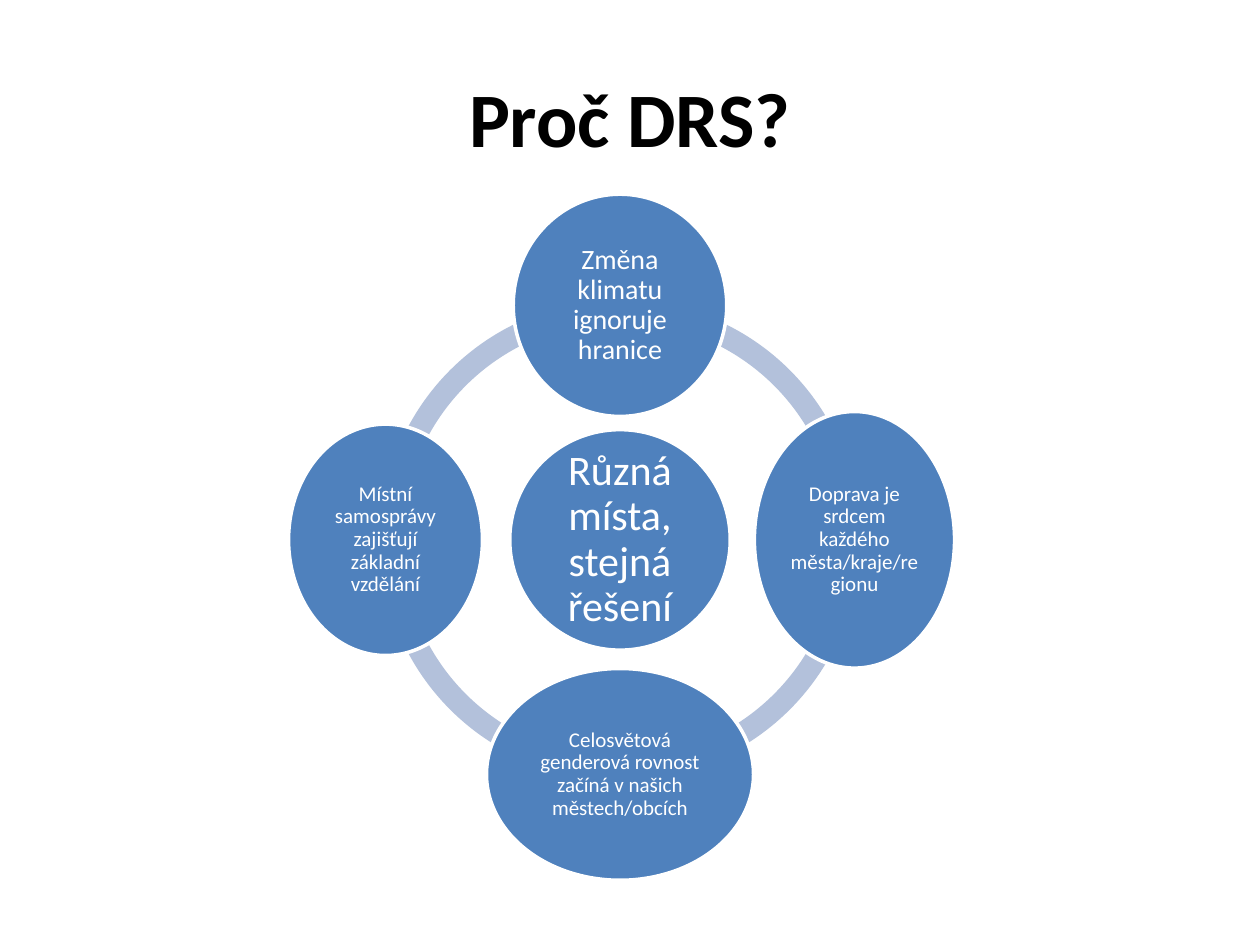
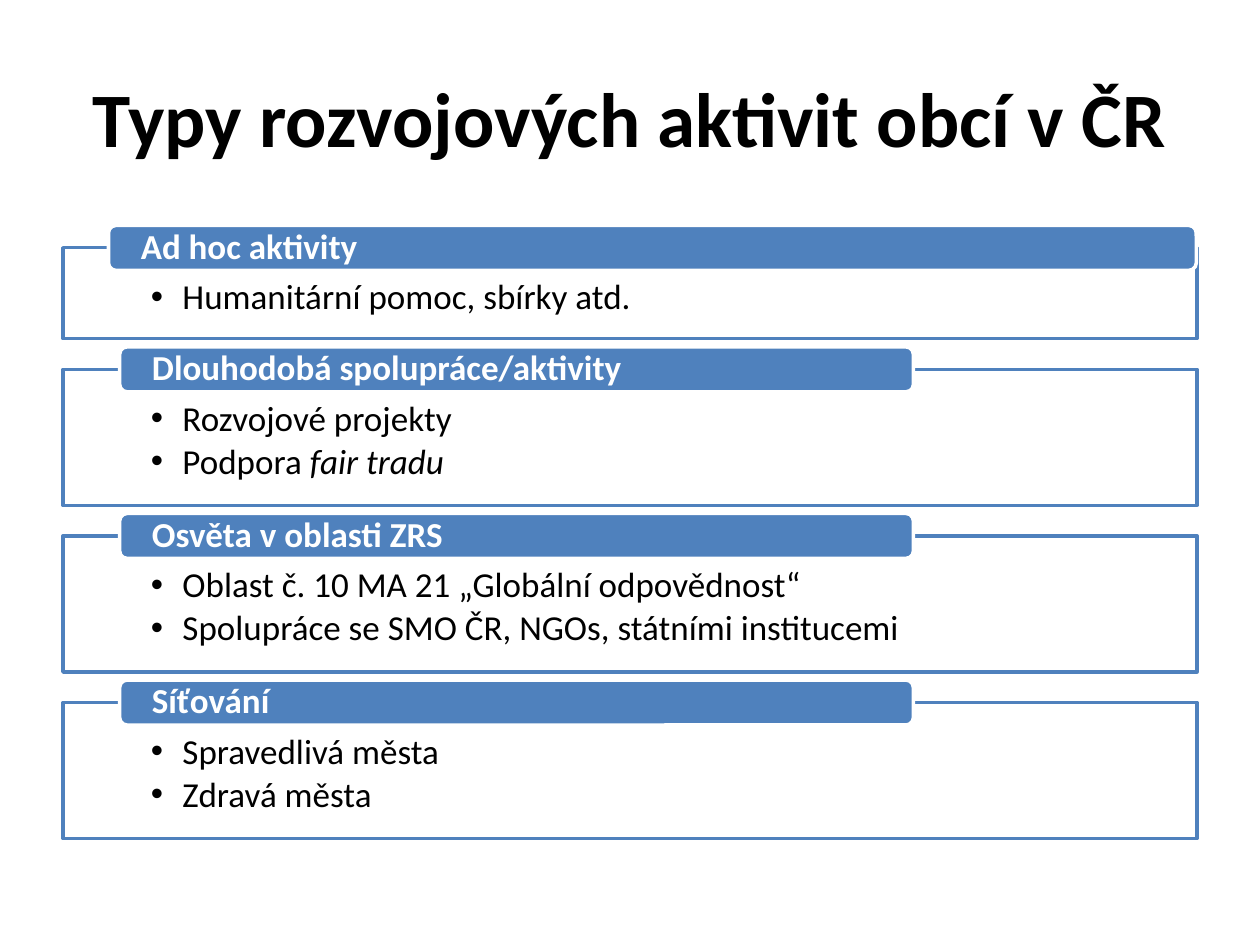
from math import cos, radians, sin

from lxml import etree
from pptx import Presentation
from pptx.dml.color import RGBColor
from pptx.enum.shapes import MSO_SHAPE
from pptx.enum.text import MSO_ANCHOR, MSO_AUTO_SIZE, PP_ALIGN
from pptx.oxml.ns import qn
from pptx.util import Pt

ARC, OVAL = MSO_SHAPE.BLOCK_ARC, MSO_SHAPE.OVAL
RECT, ROUNDED = MSO_SHAPE.RECTANGLE, MSO_SHAPE.ROUNDED_RECTANGLE
TOP, MIDDLE = MSO_ANCHOR.TOP, MSO_ANCHOR.MIDDLE
LEFT, CENTER = PP_ALIGN.LEFT, PP_ALIGN.CENTER
NO_FIT = MSO_AUTO_SIZE.NONE

THEME = {
    "font": "Calibri",
    "blue": RGBColor(0x4F, 0x81, 0xBD),
    "ring": RGBColor(0xB3, 0xC1, 0xDB),
    "white": RGBColor(0xFF, 0xFF, 0xFF),
    "black": RGBColor(0, 0, 0),
    "title_size": Pt(44),
    "hub_size": Pt(24),
    "list_size": Pt(20),
    "large_size": Pt(16),
    "small_size": Pt(12),
    "outline": Pt(2),
}


def draw_shape(page, kind, place, fill, line=None):
    shape = page.shapes.add_shape(kind, *[Pt(length) for length in place])
    shape.shadow.inherit = False
    shape.fill.solid()
    shape.fill.fore_color.rgb = fill
    if line is None:
        shape.line.fill.background()
    else:
        shape.line.color.rgb = line
        shape.line.width = THEME["outline"]
    return shape


def write_text(shape, paragraphs, size, color, margins, anchor=MIDDLE, align=CENTER, bold=False, bullet=False):
    frame = shape.text_frame
    left, top, right, bottom = [Pt(margin) for margin in margins]
    layout = {"word_wrap": True, "auto_size": NO_FIT, "vertical_anchor": anchor,
              "margin_left": left, "margin_top": top, "margin_right": right, "margin_bottom": bottom}
    for name, value in layout.items():
        setattr(frame, name, value)
    for number, spans in enumerate(paragraphs):
        para = frame.paragraphs[0] if number == 0 else frame.add_paragraph()
        para.alignment = align
        para.line_spacing = 0.9
        if bullet:
            para.level = 1
            para.space_after = Pt(3)
            properties = para._p.get_or_add_pPr()
            properties.set("marL", str(Pt(18)))
            properties.set("indent", str(-Pt(18)))
            etree.SubElement(properties, qn("a:buFont"), typeface="Arial")
            etree.SubElement(properties, qn("a:buChar"), char="•")
        for text, italic in spans:
            span = para.add_run()
            span.text = text
            for name, value in {"name": THEME["font"], "size": size, "bold": bold, "italic": italic}.items():
                setattr(span.font, name, value)
            span.font.color.rgb = color


deck = Presentation()
deck.slide_width, deck.slide_height = Pt(720), Pt(540)

pages = []
for heading in ("Proč DRS?", "Typy rozvojových aktivit obcí v ČR"):
    page = deck.slides.add_slide(deck.slide_layouts[5])
    title = page.shapes.title
    title.left, title.top, title.width, title.height = Pt(36), Pt(21.6), Pt(648), Pt(90)
    title.text_frame.text = heading
    title.text_frame.vertical_anchor = MIDDLE
    title.text_frame.auto_size = NO_FIT
    para = title.text_frame.paragraphs[0]
    para.alignment = CENTER
    for name, value in {"name": THEME["font"], "size": THEME["title_size"], "bold": True}.items():
        setattr(para.font, name, value)
    para.font.color.rgb = THEME["black"]
    pages.append(page)
reasons_page, types_page = pages

CENTER_X, CENTER_Y, ORBIT, RING = 354.3, 308.5, 134, 274.4
for start, end in ((180, 270), (90, 180), (0, 90), (270, 0)):
    place = (CENTER_X - RING / 2, CENTER_Y - RING / 2, RING, RING)
    arc = draw_shape(reasons_page, ARC, place, THEME["ring"])
    for position, value in enumerate((start * 0.6, end * 0.6, 0.046)):
        arc.adjustments[position] = value

reasons = [
    ("Různá místa, stejná řešení", 0, 0, 126, 126, "hub_size"),
    ("Změna klimatu ignoruje hranice", ORBIT, -90, 122, 127, "large_size"),
    ("Doprava je srdcem každého města/kraje/regionu", ORBIT, 0, 114.4, 146.6, "small_size"),
    ("Celosvětová genderová rovnost začíná v našich městech/obcích", ORBIT, 90, 152.6, 121, "small_size"),
    ("Místní samosprávy zajišťují základní vzdělání", ORBIT, 180, 110.8, 132.2, "small_size"),
]
for text, distance, angle, width, height, size in reasons:
    x = CENTER_X + distance * cos(radians(angle)) - width / 2
    y = CENTER_Y + distance * sin(radians(angle)) - height / 2
    oval = draw_shape(reasons_page, OVAL, (x, y, width, height), THEME["blue"], THEME["white"])
    write_text(oval, [[(text, False)]], THEME[size], THEME["white"], [1.5] * 4)

activities = [
    ("Ad hoc aktivity", 62, 621.6, 52, [[("Humanitární pomoc, sbírky atd.", False)]]),
    ("Dlouhodobá spolupráce/aktivity", 68.4, 453.6, 77.8,
     [[("Rozvojové projekty", False)], [("Podpora ", False), ("fair tradu", True)]]),
    ("Osvěta v oblasti ZRS", 68.4, 453.6, 77.8,
     [[("Oblast č. 10 MA 21 „Globální odpovědnost“", False)],
      [("Spolupráce se SMO ČR, NGOs, státními institucemi", False)]]),
    ("Síťování", 68.4, 453.6, 77.8, [[("Spravedlivá města", False)], [("Zdravá města", False)]]),
]
PANEL_GAP, TAB_HEIGHT, TAB_RISE = 17.4, 25.7, 12.8
panel_top = 141.6
for heading, tab_left, tab_width, panel_height, items in activities:
    panel = draw_shape(types_page, RECT, (36, panel_top, 648, panel_height), THEME["white"], THEME["blue"])
    fill_color = panel._element.spPr.find(qn("a:solidFill"))[0]
    etree.SubElement(fill_color, qn("a:alpha"), val="90000")
    write_text(panel, items, THEME["list_size"], THEME["black"], (50.3, 18, 50.3, 11.5), TOP, LEFT, bullet=True)
    place = (tab_left, panel_top - TAB_RISE, tab_width, TAB_HEIGHT)
    tab = draw_shape(types_page, ROUNDED, place, THEME["blue"], THEME["white"])
    write_text(tab, [[(heading, False)]], THEME["list_size"], THEME["white"], (17.2, 0, 17.2, 0), MIDDLE, LEFT, bold=True)
    panel_top += panel_height + PANEL_GAP

deck.save("out.pptx")
